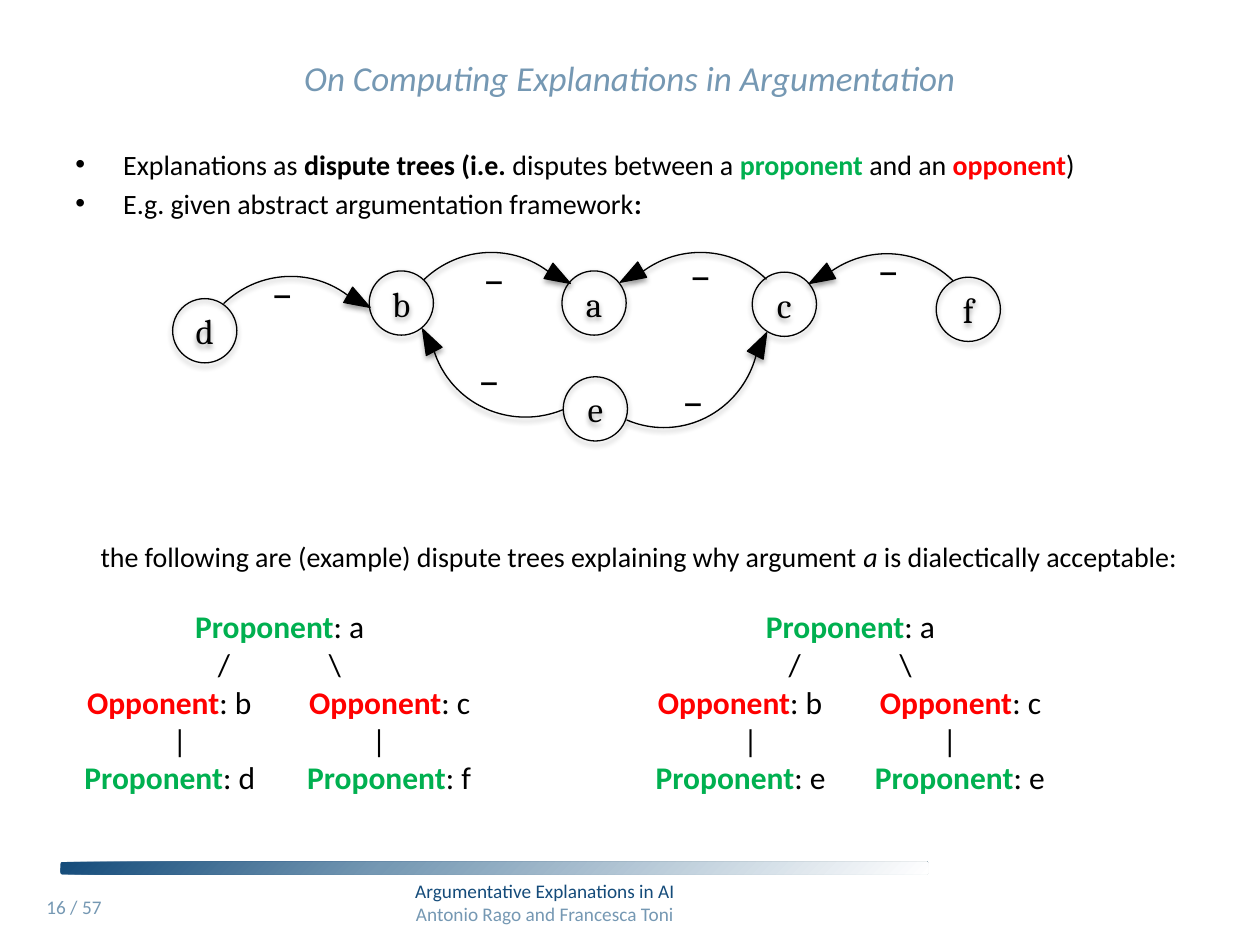
from dataclasses import dataclass
from typing import NamedTuple, Optional

from lxml.etree import SubElement
from pptx import Presentation
from pptx.dml.color import RGBColor
from pptx.enum.shapes import MSO_SHAPE
from pptx.enum.text import MSO_ANCHOR, PP_ALIGN
from pptx.oxml import parse_xml
from pptx.oxml.ns import nsdecls, qn
from pptx.util import Inches, Pt

SLIDE_WIDTH, SLIDE_HEIGHT = Inches(10), Inches(7.5)
COLUMN, ROW = SLIDE_WIDTH / 100, SLIDE_HEIGHT / 75


@dataclass(frozen=True)
class Theme:
    ink: str = "000000"
    paper: str = "FFFFFF"
    navy: str = "144B7A"
    steel: str = "7598B3"
    green: str = "00B050"
    red: str = "FF0000"
    font: str = "Calibri"
    node_font: str = "Cambria"
    title: int = 20
    body: int = 16
    tree: int = 18
    node: int = 20
    sign: int = 24
    footer: int = 11


THEME = Theme()


class Area(NamedTuple):
    """Left, top, width and height in grid columns and rows."""
    column: float
    row: float
    columns: float
    rows: float

    def lengths(self) -> tuple:
        return (round(self.column * COLUMN), round(self.row * ROW),
                round(self.columns * COLUMN), round(self.rows * ROW))


class Span(NamedTuple):
    text: str
    color: str = THEME.ink
    bold: bool = False
    italic: bool = False


class Line(NamedTuple):
    spans: list
    align: PP_ALIGN = PP_ALIGN.LEFT
    bullet: bool = False
    tabs: tuple = ()


class Node(NamedTuple):
    name: str
    column: float
    row: float


class Attack(NamedTuple):
    arc: tuple  # column, row, rotation
    head: tuple  # column, row, rotation
    sign: tuple  # column, row
    sweep: tuple = (160.861, 213.771)


PROPONENT = Span("Proponent", THEME.green, bold=True)
OPPONENT = Span("Opponent", THEME.red, bold=True)
TAB = Span("\t")

NODES = [Node("a", 44.6, 21.5), Node("b", 29.3, 21.5), Node("c", 59.7, 21.6),
         Node("d", 13.7, 23.7), Node("e", 44.7, 29.9), Node("f", 74.3, 22)]
ATTACKS = [
    Attack((47.8, 20.1, 318.2), (49.4, 20.9, 240), (53.8, 19.4)),
    Attack((31.2, 20.1, 318.2), (43.7, 21, 120), (37.4, 19.7)),
    Attack((15.3, 22, 318.2), (27.8, 22.9, 120), (20.6, 20.8)),
    Attack((62.6, 20.2, 318.2), (64.4, 21, 240), (68.7, 19)),
    Attack((34.1, 18.1, 171.4), (33.3, 26, 332.4), (37, 27.7), (153.516, 213.771)),
    Attack((45.1, 18.8, 105.6), (59.7, 26.3, 27), (53.2, 29.4), (160.861, 4.46)),
]


def write(shape, lines: list, size: int, font: str = THEME.font,
          anchor: MSO_ANCHOR = MSO_ANCHOR.TOP, gap: float = 0) -> None:
    frame = shape.text_frame
    frame.word_wrap = True
    frame.vertical_anchor = anchor
    for index, line in enumerate(lines):
        para = frame.add_paragraph() if index else frame.paragraphs[0]
        properties = para._p.get_or_add_pPr()
        if line.bullet:
            properties.set("marL", str(Inches(0.38)))
            properties.set("indent", str(-Inches(0.38)))
            SubElement(properties, qn("a:buFont")).set("typeface", "Arial")
            SubElement(properties, qn("a:buChar")).set("char", "•")
        if line.tabs:
            stops = SubElement(properties, qn("a:tabLst"))
            for position in line.tabs:
                stop = SubElement(stops, qn("a:tab"))
                stop.set("pos", str(round(position * COLUMN)))
                stop.set("algn", "ctr")
        para.alignment = line.align
        para.space_before = Pt(gap if index else 0)
        for span in line.spans:
            run = para.add_run()
            run.text = span.text
            run.font.name, run.font.size = font, Pt(size)
            run.font.bold, run.font.italic = span.bold, span.italic
            run.font.color.rgb = RGBColor.from_string(span.color)


def add_text(page, area: Area, lines: list, size: int, **options) -> None:
    write(page.shapes.add_textbox(*area.lengths()), lines, size, **options)


def add_form(page, kind: MSO_SHAPE, area: Area, fill: Optional[str] = None,
             outlined: bool = True, rotation: float = 0):
    shape = page.shapes.add_shape(kind, *area.lengths())
    shape.rotation = rotation
    shape.shadow.inherit = False
    if fill:
        shape.fill.solid()
        shape.fill.fore_color.rgb = RGBColor.from_string(fill)
    else:
        shape.fill.background()
    if not outlined:
        shape.line.fill.background()
        return shape
    shape.line.color.rgb = RGBColor.from_string(THEME.ink)
    shape.line.width = Pt(0.75)
    shape._element.spPr.find(qn("a:effectLst")).append(parse_xml(
        f'<a:outerShdw {nsdecls("a")} blurRad="{Pt(3.1)}" dist="{Pt(1.8)}" dir="5400000" '
        f'rotWithShape="0"><a:srgbClr val="{THEME.ink}"><a:alpha val="35000"/>'
        '</a:srgbClr></a:outerShdw>'))
    return shape


def add_node(page, node: Node) -> None:
    circle = add_form(page, MSO_SHAPE.OVAL, Area(node.column, node.row, 5.1, 5.1))
    write(circle, [Line([Span(node.name)], PP_ALIGN.CENTER)], THEME.node,
          font=THEME.node_font, anchor=MSO_ANCHOR.MIDDLE)


def add_attack(page, attack: Attack) -> None:
    column, row, turn = attack.arc
    arc = add_form(page, MSO_SHAPE.BLOCK_ARC, Area(column, row, 15.3, 15), THEME.ink, rotation=turn)
    for index, value in enumerate((*attack.sweep, 0)):
        arc.adjustments[index] = value
    column, row, turn = attack.head
    add_form(page, MSO_SHAPE.ISOSCELES_TRIANGLE, Area(column, row, 1.4, 2), THEME.ink, rotation=turn)
    add_text(page, Area(*attack.sign, 3.7, 5), [Line([Span("−")])], THEME.sign)


def add_tree(page, center: float, left_leaf: str, right_leaf: str) -> None:
    width, inset = 35, 1
    middle = width / 2 - inset

    def pair(left: list, right: list, spread: float) -> Line:
        return Line([TAB, *left, TAB, *right], tabs=(middle - spread, middle + spread))

    add_text(page, Area(center - width / 2, 47.7, width, 16.2), [
        Line([PROPONENT, Span(": a")], PP_ALIGN.CENTER),
        pair([Span("/")], [Span("\\")], 4.4),
        pair([OPPONENT, Span(": b")], [OPPONENT, Span(": c")], 8.75),
        pair([Span("|")], [Span("|")], 7.9),
        pair([PROPONENT, Span(f": {left_leaf}")], [PROPONENT, Span(f": {right_leaf}")], 8.7),
    ], THEME.tree)


def add_footer(page) -> None:
    band = add_form(page, MSO_SHAPE.ROUNDED_RECTANGLE, Area(4.8, 68.4, 68.9, 1), outlined=False)
    stops = "".join(f'<a:gs pos="{share * 1000}"><a:srgbClr val="{color}"/></a:gs>'
                    for share, color in ((0, THEME.paper), (63, THEME.steel), (100, THEME.navy)))
    properties = band._element.spPr
    properties.replace(properties.find(qn("a:noFill")), parse_xml(
        f'<a:gradFill {nsdecls("a")} rotWithShape="1"><a:gsLst>{stops}</a:gsLst>'
        '<a:path path="circle"><a:fillToRect l="100000" t="100000"/></a:path></a:gradFill>'))
    add_text(page, Area(11.6, 69.3, 63.3, 4.7), [
        Line([Span("Argumentative Explanations in AI", THEME.navy)], PP_ALIGN.CENTER),
        Line([Span("Antonio Rago and Francesca Toni", THEME.steel)], PP_ALIGN.CENTER),
    ], THEME.footer)
    number = add_form(page, MSO_SHAPE.RECTANGLE, Area(2.7, 70.6, 6.7, 4), THEME.paper, outlined=False)
    write(number, [Line([Span("16 / 57", THEME.steel)])], THEME.footer)


def main() -> None:
    deck = Presentation()
    deck.slide_width, deck.slide_height = SLIDE_WIDTH, SLIDE_HEIGHT
    page = deck.slides.add_slide(deck.slide_layouts[6])
    add_footer(page)

    # Title and introduction
    title = Span("On Computing Explanations in Argumentation", THEME.steel, italic=True)
    add_text(page, Area(5, 3, 90, 6.3), [Line([title], PP_ALIGN.CENTER)],
             THEME.title, anchor=MSO_ANCHOR.MIDDLE)
    add_text(page, Area(5, 11.2, 90, 7), [
        Line([Span("Explanations as "), Span("dispute trees (i.e. ", bold=True),
              Span("disputes between a "), Span("proponent", THEME.green, bold=True),
              Span(" and an "), Span("opponent", THEME.red, bold=True), Span(")")], bullet=True),
        Line([Span("E.g. given abstract argumentation framework"), Span(":", bold=True)], bullet=True),
    ], THEME.body, gap=3)

    # Argumentation framework
    for attack in ATTACKS:
        add_attack(page, attack)
    for node in NODES:
        add_node(page, node)

    # Dispute trees
    add_text(page, Area(7, 42.3, 90, 4), [Line([
        Span("the following are (example) dispute trees explaining why argument "),
        Span("a ", italic=True), Span("is dialectically acceptable:")])], THEME.body)
    add_tree(page, 22.2, "d", "f")
    add_tree(page, 67.5, "e", "e")
    deck.save("out.pptx")


if __name__ == "__main__":
    main()
